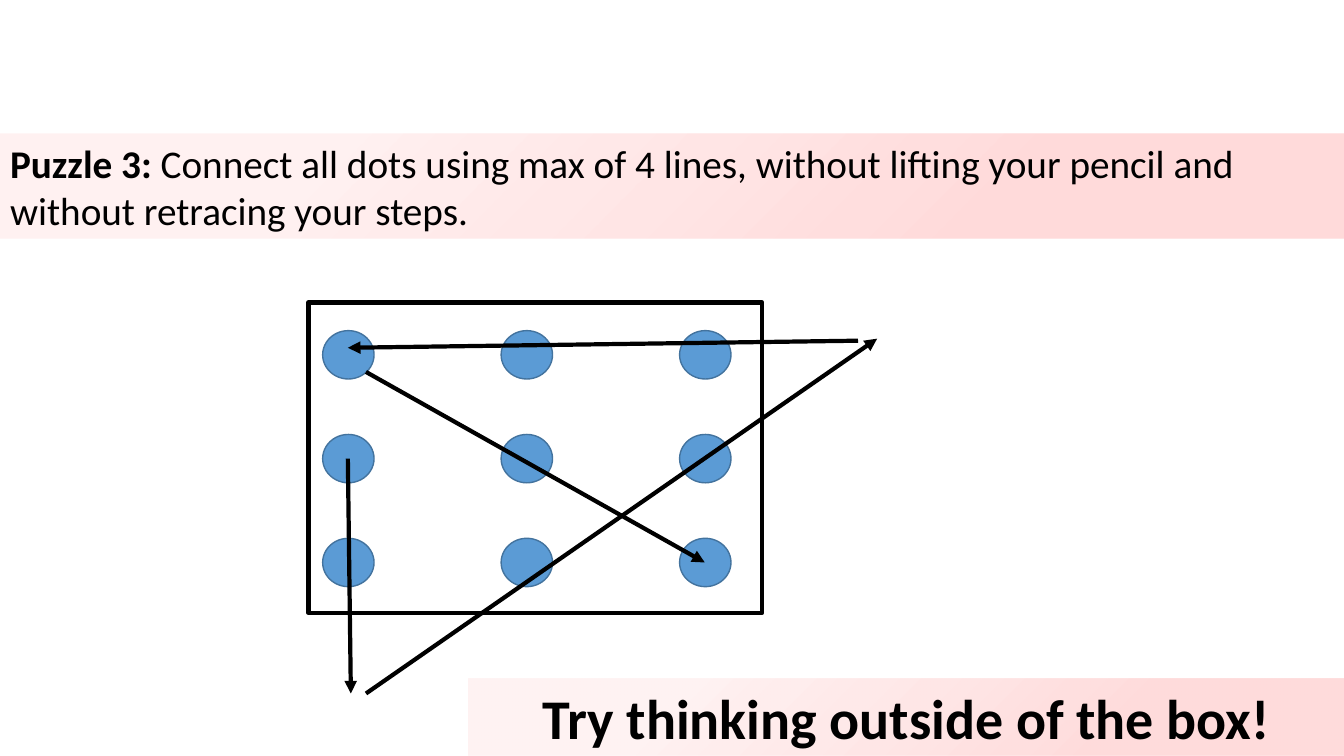
from dataclasses import dataclass
from itertools import product

from lxml import etree
from pptx import Presentation
from pptx.dml.color import RGBColor
from pptx.enum.shapes import MSO_CONNECTOR, MSO_SHAPE
from pptx.enum.text import MSO_ANCHOR, MSO_AUTO_SIZE, PP_ALIGN
from pptx.oxml import parse_xml
from pptx.oxml.ns import nsdecls, qn
from pptx.util import Inches, Pt

LEFT, CENTER = PP_ALIGN.LEFT, PP_ALIGN.CENTER
TOP, NO_FIT = MSO_ANCHOR.TOP, MSO_AUTO_SIZE.NONE
OVAL, RECTANGLE = MSO_SHAPE.OVAL, MSO_SHAPE.RECTANGLE
STRAIGHT = MSO_CONNECTOR.STRAIGHT

PUZZLE = [
    ("Puzzle 3: ", True),
    ("Connect all dots using max of 4 lines, without lifting your pencil "
     "and without retracing your steps.", False),
]
HINT = [("Try thinking outside of the box!", True)]

WIDTH, HEIGHT = 13.33, 7.5
PUZZLE_AREA = (0, 1.33, WIDTH, 1.04)
HINT_AREA = (4.65, 6.73, WIDTH - 4.65, 0.77)
FRAME_AREA = (3.06, 3, 4.5, 3.08)

GRID_SIZE = 3
GRID_LEFT, GRID_TOP = 3.2, 3.28
COLUMN_STEP, ROW_STEP = 1.77, 1.03
DOT_WIDTH, DOT_HEIGHT = 0.51, 0.48

STROKES = [
    ((3.45, 4.55), (3.48, 6.88)),
    ((3.63, 6.88), (8.7, 3.36)),
    ((8.51, 3.38), (3.45, 3.45)),
    ((3.63, 3.69), (6.99, 5.58)),
]


@dataclass(frozen=True)
class Theme:
    font: str = "Calibri"
    ink: RGBColor = RGBColor(0x00, 0x00, 0x00)
    dot: RGBColor = RGBColor(0x5B, 0x9B, 0xD5)
    dot_edge: RGBColor = RGBColor(0x43, 0x73, 0x9E)
    glow: str = "FF0000"
    glow_stops: tuple = ((26, 14), (76, 5))
    puzzle_size: int = 28
    hint_size: int = 40
    dot_line: int = 1
    stroke: int = 3


THEME = Theme()


def inches(lengths):
    return [Inches(length) for length in lengths]


def set_line(line, color, width):
    line.color.rgb = color
    line.width = Pt(width)


def fill_glow(shape):
    shape.fill.gradient()
    gradient = shape.fill._xPr.find(qn("a:gradFill"))
    stops = "".join(
        f'<a:gs pos="{position * 1000}"><a:srgbClr val="{THEME.glow}">'
        f'<a:alpha val="{alpha * 1000}"/></a:srgbClr></a:gs>'
        for position, alpha in THEME.glow_stops
    )
    glow = parse_xml(
        f'<a:gradFill {nsdecls("a")} rotWithShape="1"><a:gsLst>{stops}</a:gsLst>'
        '<a:path path="circle"><a:fillToRect l="100000" t="100000"/></a:path>'
        '</a:gradFill>'
    )
    gradient.getparent().replace(gradient, glow)


def write_banner(shape, area, spans, size, alignment):
    shape.left, shape.top, shape.width, shape.height = inches(area)
    fill_glow(shape)
    frame = shape.text_frame
    settings = {
        "word_wrap": True, "auto_size": NO_FIT, "vertical_anchor": TOP,
        "margin_left": Inches(0.1), "margin_right": Inches(0.1),
        "margin_top": Inches(0.05), "margin_bottom": Inches(0.05),
    }
    for name, value in settings.items():
        setattr(frame, name, value)
    para = frame.paragraphs[0]
    para.alignment = alignment
    for text, bold in spans:
        span = para.add_run()
        span.text = text
        for name, value in {"name": THEME.font, "size": Pt(size), "bold": bold}.items():
            setattr(span.font, name, value)
        span.font.color.rgb = THEME.ink


def add_dots(page):
    for row, column in product(range(GRID_SIZE), repeat=2):
        area = (GRID_LEFT + column * COLUMN_STEP, GRID_TOP + row * ROW_STEP,
                DOT_WIDTH, DOT_HEIGHT)
        dot = page.shapes.add_shape(OVAL, *inches(area))
        dot.shadow.inherit = False
        dot.fill.solid()
        dot.fill.fore_color.rgb = THEME.dot
        set_line(dot.line, THEME.dot_edge, THEME.dot_line)


def add_frame(page):
    frame = page.shapes.add_shape(RECTANGLE, *inches(FRAME_AREA))
    frame.shadow.inherit = False
    frame.fill.background()
    set_line(frame.line, THEME.ink, THEME.stroke)


def add_strokes(page):
    for start, end in STROKES:
        arrow = page.shapes.add_connector(STRAIGHT, *inches(start + end))
        set_line(arrow.line, THEME.ink, THEME.stroke)
        properties = arrow._element.spPr
        etree.SubElement(properties.find(qn("a:ln")), qn("a:tailEnd"), type="triangle")
        etree.SubElement(properties, qn("a:effectLst"))


def main():
    deck = Presentation()
    deck.slide_width, deck.slide_height = inches((WIDTH, HEIGHT))
    page = deck.slides.add_slide(deck.slide_layouts.get_by_name("Title Only"))
    write_banner(page.shapes.title, PUZZLE_AREA, PUZZLE, THEME.puzzle_size, LEFT)
    add_dots(page)
    add_frame(page)
    add_strokes(page)
    hint = page.shapes.add_textbox(*inches(HINT_AREA))
    write_banner(hint, HINT_AREA, HINT, THEME.hint_size, CENTER)
    deck.save("out.pptx")


if __name__ == "__main__":
    main()
